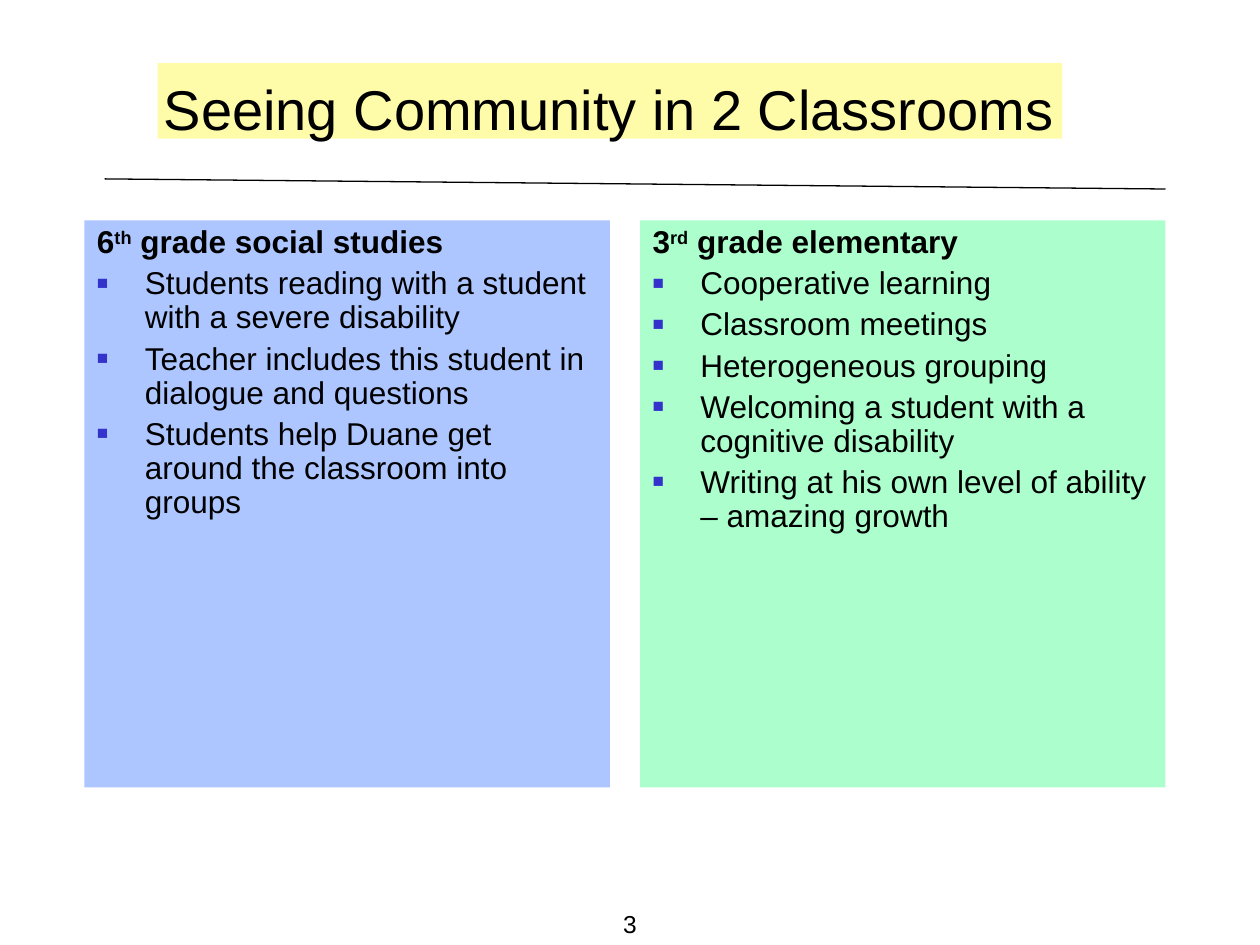
from dataclasses import dataclass

import pptx
import pptx.dml.color
import pptx.enum.shapes
import pptx.enum.text
import pptx.oxml
import pptx.oxml.ns
import pptx.util

Inches = pptx.util.Inches
Pt = pptx.util.Pt
Align = pptx.enum.text.PP_ALIGN
Anchor = pptx.enum.text.MSO_ANCHOR

HUES = {
    "text": "000000",
    "title": "FFFCA9",
    "blue": "ADC6FF",
    "green": "ACFFCD",
    "bullet": "3333CC",
}
FONT = "Arial"
TOP, WIDTH, HEIGHT = 1.75, 4.17, 4.5
PAD = 0.05


@dataclass
class Panel:
    left: float
    hue: str
    grade: str
    suffix: str
    topic: str
    points: list[str]


PANELS = [
    Panel(0.67, "blue", "6", "th", " grade social studies", [
        "Students reading with a student with a severe disability",
        "Teacher includes this student in dialogue and questions",
        "Students help Duane get around the classroom into groups",
    ]),
    Panel(5.08, "green", "3", "rd", " grade elementary", [
        "Cooperative learning",
        "Classroom meetings",
        "Heterogeneous grouping",
        "Welcoming a student with a cognitive disability",
        "Writing at his own level of ability – amazing growth",
    ]),
]


def color(name: str) -> pptx.dml.color.RGBColor:
    return pptx.dml.color.RGBColor.from_string(HUES[name])


def set_frame(frame, wrap: bool, anchor=Anchor.TOP) -> None:
    frame.word_wrap = wrap
    frame.auto_size = pptx.enum.text.MSO_AUTO_SIZE.NONE
    frame.vertical_anchor = anchor
    frame.margin_left = frame.margin_right = Inches(PAD)
    frame.margin_top = frame.margin_bottom = Inches(PAD)


def add_run(para, text: str, size: int, bold: bool = False, base: int = 0) -> None:
    run = para.add_run()
    run.text = text
    font = run.font
    font.name, font.size, font.bold = FONT, Pt(size), bold
    font.color.rgb = color("text")
    if base:
        font._element.set("baseline", str(base * 1000))


def add_bullet(para) -> None:
    props = para._p.get_or_add_pPr()
    space = pptx.oxml.ns.nsdecls("a")
    for part in (
        f'<a:buClr {space}><a:srgbClr val="{HUES["bullet"]}"/></a:buClr>',
        f'<a:buSzPct {space} val="60000"/>',
        f'<a:buFont {space} typeface="{FONT}"/>',
        f'<a:buChar {space} char="■"/>',
    ):
        props.append(pptx.oxml.parse_xml(part))


def set_para(para, first: bool) -> None:
    props = para._p.get_or_add_pPr()
    props.set("marL", str(Inches(0.38)))
    props.set("indent", str(-Inches(0.38)))
    para.line_spacing = 0.9
    para.space_before = Pt(0 if first else 4)


def add_panel(slide, panel: Panel) -> None:
    group = slide.shapes.add_group_shape()
    rect = group.shapes.add_shape(
        pptx.enum.shapes.MSO_SHAPE.RECTANGLE,
        Inches(panel.left), Inches(TOP), Inches(WIDTH), Inches(HEIGHT))
    rect.shadow.inherit = False
    rect.fill.solid()
    rect.fill.fore_color.rgb = color(panel.hue)
    rect.line.fill.background()

    # Text lies just inside the coloured panel
    box = group.shapes.add_textbox(
        Inches(panel.left + PAD), Inches(TOP),
        Inches(WIDTH - 2 * PAD), Inches(3.05))
    frame = box.text_frame
    set_frame(frame, wrap=True)
    head = frame.paragraphs[0]
    set_para(head, first=True)
    add_run(head, panel.grade, 18, bold=True)
    add_run(head, panel.suffix, 18, bold=True, base=30)
    add_run(head, panel.topic, 18, bold=True)
    for point in panel.points:
        para = frame.add_paragraph()
        set_para(para, first=False)
        add_bullet(para)
        add_run(para, point, 18)


def add_title(slide) -> None:
    title = slide.shapes.title
    title.left, title.top = Inches(1.25), Inches(0.5)
    title.width, title.height = Inches(7.18), Inches(0.6)
    title.fill.solid()
    title.fill.fore_color.rgb = color("title")
    frame = title.text_frame
    set_frame(frame, wrap=False)
    frame.margin_top = Inches(0.09)
    para = frame.paragraphs[0]
    para.alignment = Align.LEFT
    add_run(para, "Seeing Community in 2 Classrooms", 32)


def add_rule(slide) -> None:
    rule = slide.shapes.add_connector(
        pptx.enum.shapes.MSO_CONNECTOR.STRAIGHT,
        Inches(0.83), Inches(1.42), Inches(9.25), Inches(1.5))
    rule.line.color.rgb = color("text")
    rule.line.width = Pt(0.75)
    rule._element.spPr.append(pptx.oxml.parse_xml(
        f'<a:effectLst {pptx.oxml.ns.nsdecls("a")}/>'))


def add_number(slide) -> None:
    box = slide.shapes.add_textbox(
        Inches(4.89), Inches(7.18), Inches(0.22), Inches(0.32))
    set_frame(box.text_frame, wrap=False, anchor=Anchor.BOTTOM)
    para = box.text_frame.paragraphs[0]
    para.alignment = Align.CENTER
    add_run(para, "3", 14)


def main() -> None:
    deck = pptx.Presentation()
    deck.slide_width, deck.slide_height = Inches(10), Inches(7.5)
    slide = deck.slides.add_slide(deck.slide_layouts[5])

    # Heading, panels, rule and page number
    add_title(slide)
    for panel in PANELS:
        add_panel(slide, panel)
    add_rule(slide)
    add_number(slide)
    deck.save("out.pptx")


if __name__ == "__main__":
    main()
